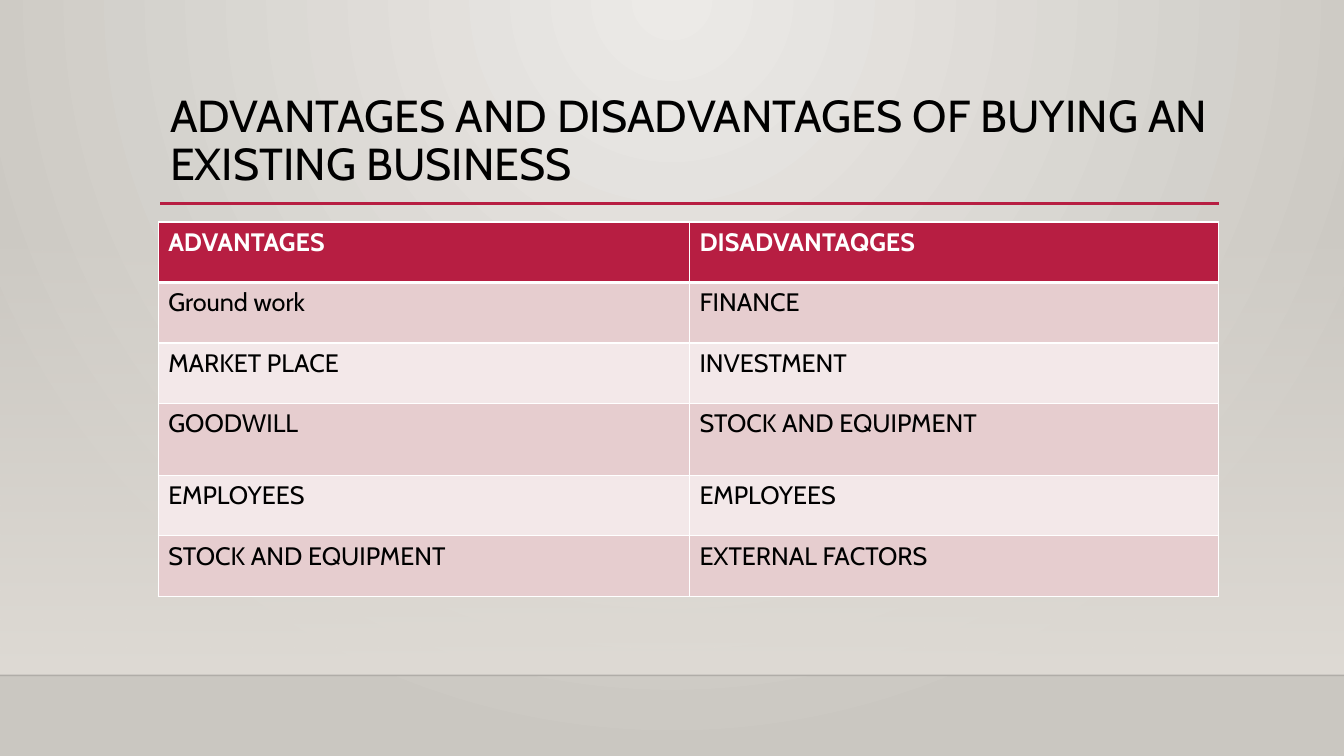
from lxml.etree import SubElement
from pptx import Presentation
from pptx.dml.color import RGBColor
from pptx.enum.shapes import MSO_CONNECTOR, MSO_SHAPE
from pptx.enum.text import MSO_ANCHOR
from pptx.oxml.ns import qn
from pptx.util import Pt

TITLE = "ADVANTAGES AND DISADVANTAGES OF BUYING AN EXISTING BUSINESS"
ROWS = [
    ("ADVANTAGES", "DISADVANTAQGES"),
    ("Ground work", "FINANCE"),
    ("MARKET PLACE", "INVESTMENT"),
    ("GOODWILL", "STOCK AND EQUIPMENT"),
    ("EMPLOYEES", "EMPLOYEES"),
    ("STOCK AND EQUIPMENT", "EXTERNAL FACTORS"),
]
COLUMN_WIDTHS = (379.5, 378)
ROW_HEIGHTS = (43.2, 43.2, 43.2, 51.2, 43.2, 43.2)

FONT = "Cabin"
BLACK = RGBColor(0x00, 0x00, 0x00)
WHITE = RGBColor(0xFF, 0xFF, 0xFF)
CRIMSON = RGBColor(0xB7, 0x1E, 0x42)
ROSE = RGBColor(0xE6, 0xCD, 0xCF)
PALE_ROSE = RGBColor(0xF3, 0xE8, 0xE9)
WALL_LIGHT = RGBColor(0xEC, 0xEA, 0xE7)
WALL_DARK = RGBColor(0xCA, 0xC7, 0xC1)
HAZE = RGBColor(0xDF, 0xDB, 0xD5)
WIDTH, HEIGHT = 960, 540
FLOOR_TOP = 482.4


def set_gradient(fill, first, last):
    fill.gradient()
    for stop, color, position in zip(fill.gradient_stops, (first, last), (0, 1)):
        stop.color.rgb = color
        stop.position = position


def set_alpha(color_element, percent):
    SubElement(color_element, qn("a:alpha"), val=str(percent * 1000))


def add_rule(page, left, right, top, color, weight):
    rule = page.shapes.add_connector(
        MSO_CONNECTOR.STRAIGHT, Pt(left), Pt(top), Pt(right), Pt(top))
    rule.line.color.rgb = color
    rule.line.width = Pt(weight)
    SubElement(rule.element.spPr, qn("a:effectLst"))
    return rule


def add_span(para, text, size, color, bold=False):
    span = para.add_run()
    span.text = text
    span.font.name = FONT
    span.font.size = Pt(size)
    span.font.bold = bold
    span.font.color.rgb = color


def set_borders(cell, weights):
    """Draw white cell borders; weights maps L, R, T, B to points."""
    properties = cell._tc.get_or_add_tcPr()
    for side, weight in weights.items():
        line = SubElement(properties, qn(f"a:ln{side}"), w=str(Pt(weight)))
        solid = SubElement(line, qn("a:solidFill"))
        SubElement(solid, qn("a:srgbClr"), val=str(WHITE))


def add_backdrop(page):
    set_gradient(page.background.fill, WALL_LIGHT, WALL_DARK)
    gradient = page.element.find(".//" + qn("a:gradFill"))
    gradient.remove(gradient.find(qn("a:lin")))
    circle = SubElement(gradient, qn("a:path"))
    circle.set("path", "circle")
    SubElement(circle, qn("a:fillToRect"), l="43000", t="0", r="43000", b="100000")

    haze_top = 159.1
    haze = page.shapes.add_shape(
        MSO_SHAPE.RECTANGLE, 0, Pt(haze_top), Pt(WIDTH), Pt(FLOOR_TOP - haze_top))
    haze.shadow.inherit = False
    haze.line.fill.background()
    set_gradient(haze.fill, HAZE, HAZE)
    haze.fill.gradient_angle = 270
    set_alpha(haze.element.find(".//" + qn("a:srgbClr")), 0)

    floor_edge = add_rule(page, 0, WIDTH, FLOOR_TOP, BLACK, 1)
    set_alpha(floor_edge.element.find(".//" + qn("a:srgbClr")), 20)


def add_title(page):
    box = page.shapes.add_textbox(Pt(114.5), Pt(63.4), Pt(756), Pt(82.8))
    box.text_frame.word_wrap = True
    box.text_frame.vertical_anchor = MSO_ANCHOR.TOP
    para = box.text_frame.paragraphs[0]
    para.line_spacing = 0.9
    add_span(para, TITLE, 32, BLACK)


def add_comparison(page):
    table = page.shapes.add_table(
        len(ROWS), len(COLUMN_WIDTHS), Pt(113), Pt(158.6),
        Pt(sum(COLUMN_WIDTHS)), Pt(sum(ROW_HEIGHTS))).table
    for column, width in zip(table.columns, COLUMN_WIDTHS):
        column.width = Pt(width)
    for index, (row, height, texts) in enumerate(zip(table.rows, ROW_HEIGHTS, ROWS)):
        row.height = Pt(height)
        header = index == 0
        fill = CRIMSON if header else (ROSE if index % 2 else PALE_ROSE)
        weights = {"L": 1, "R": 1, "T": 3 if index == 1 else 1, "B": 3 if header else 1}
        for cell, text in zip(row.cells, texts):
            set_borders(cell, weights)
            cell.fill.solid()
            cell.fill.fore_color.rgb = fill
            add_span(cell.text_frame.paragraphs[0], text, 18,
                     WHITE if header else BLACK, header)


def main():
    deck = Presentation()
    deck.slide_width, deck.slide_height = Pt(WIDTH), Pt(HEIGHT)
    page = deck.slides.add_slide(deck.slide_layouts[6])
    add_backdrop(page)
    add_rule(page, 114.5, 871, 145.4, CRIMSON, 2.5)
    add_title(page)
    add_comparison(page)
    deck.save("out.pptx")


if __name__ == "__main__":
    main()
